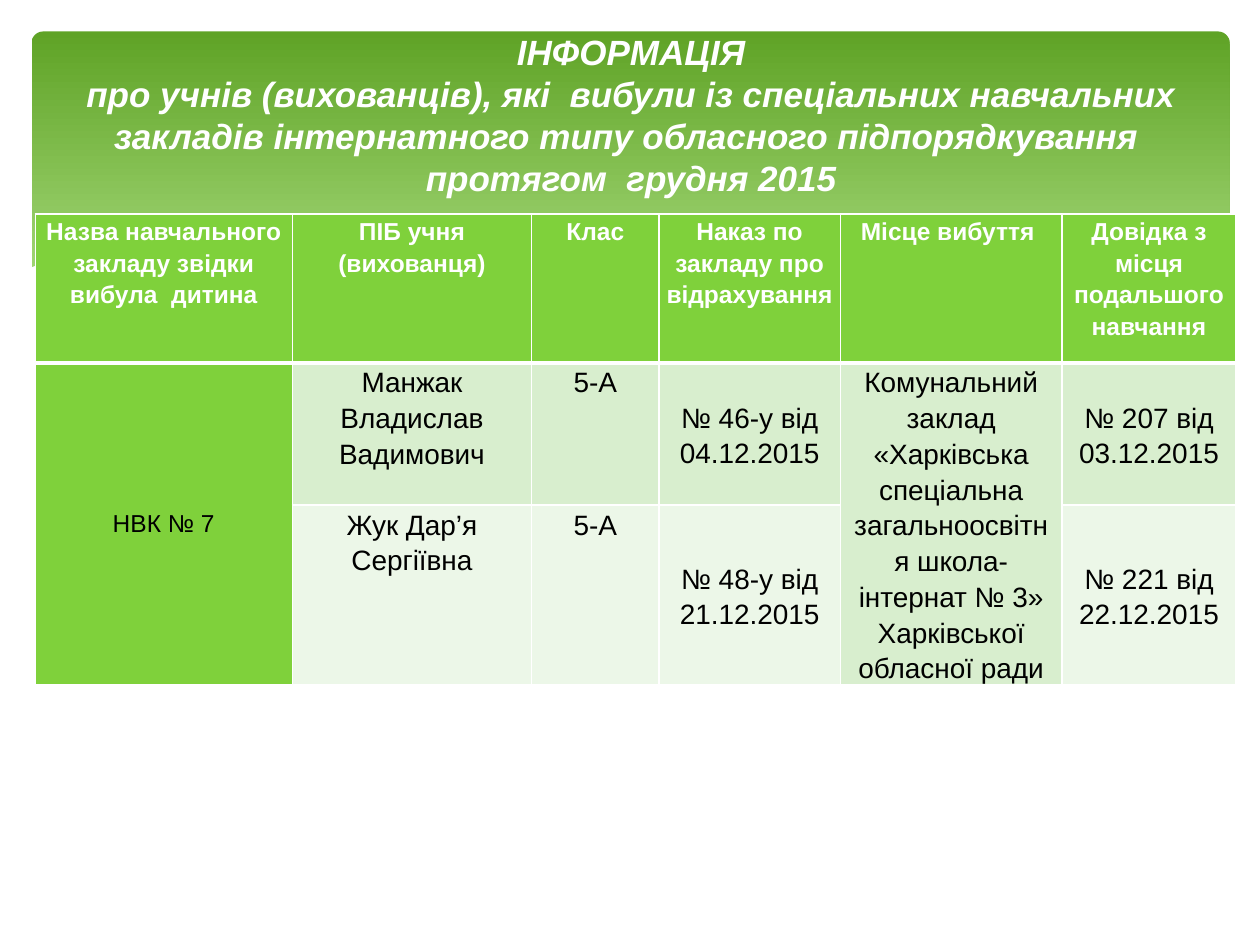
"""Build a one-slide report on pupils who left special boarding schools."""
from lxml import etree
from pptx import Presentation
from pptx.dml.color import RGBColor
from pptx.enum.shapes import MSO_SHAPE
from pptx.enum.text import MSO_ANCHOR, MSO_AUTO_SIZE, PP_ALIGN
from pptx.oxml.ns import qn
from pptx.util import Inches, Pt

ROUNDED = MSO_SHAPE.ROUNDED_RECTANGLE
TOP, MIDDLE = MSO_ANCHOR.TOP, MSO_ANCHOR.MIDDLE
CENTER = PP_ALIGN.CENTER
NO_FIT = MSO_AUTO_SIZE.NONE

FONT = "Arial"
COLORS = {
    "white": "FFFFFF",
    "black": "000000",
    "band_top": "5FA326",
    "band_bottom": "B2E389",
    "header": "7FD13B",
    "row_dark": "D8EECE",
    "row_light": "ECF7E8",
}
TITLE = (
    "ІНФОРМАЦІЯ\v"
    "про учнів (вихованців), які  вибули із спеціальних навчальних "
    "закладів інтернатного типу обласного підпорядкування \v"
    "протягом  грудня 2015"
)
ROWS = [
    ["Назва навчального закладу звідки вибула  дитина", "ПІБ учня (вихованця)",
     "Клас", "Наказ по закладу про відрахування", "Місце вибуття ",
     "Довідка з місця подальшого навчання"],
    ["НВК № 7", "Манжак Владислав Вадимович", "5-А", "№ 46-у від 04.12.2015",
     "Комунальний заклад «Харківська спеціальна загальноосвітня "
     "школа-інтернат № 3» Харківської обласної ради",
     "№ 207 від 03.12.2015"],
    ["", "Жук Дар’я Сергіївна", "5-А", "№ 48-у від 21.12.2015", "",
     "№ 221 від 22.12.2015"],
]
COL_WIDTHS = [2.04, 1.9, 1.01, 1.44, 1.76, 1.38]
ROW_HEIGHTS = [1.18, 1.13, 1.42]
MERGED_COLS = (0, 4)
TOP_COLS = (1, 2)
WAVE = [
    (9.77, 2.46), (9.2, 2.65), (8.5, 2.75), (7.78, 2.76), (6.88, 2.68),
    (5.79, 2.5), (4.47, 2.2), (3.4, 1.97), (2.5, 1.86), (1.77, 1.84),
    (1.06, 1.89), (0.59, 1.99), (0.23, 2.13), (0.23, 3.29), (9.77, 3.29),
]


def rgb(name):
    return RGBColor.from_string(COLORS[name])


def set_font(p, size, color, bold=False, italic=False):
    p.alignment = CENTER
    p.font.name = FONT
    p.font.size = Pt(size)
    p.font.bold = bold
    p.font.italic = italic
    p.font.color.rgb = rgb(color)


def add_band(s):
    sp = s.shapes.add_shape(ROUNDED, Inches(0.25), Inches(0.25), Inches(9.51), Inches(2.7))
    sp.adjustments[0] = 0.034
    sp.shadow.inherit = False
    sp.line.fill.background()
    sp.fill.gradient()
    sp.fill.gradient_angle = 270
    stops = zip(sp.fill.gradient_stops, (0, 0.9), ("band_top", "band_bottom"))
    for stop, position, color in stops:
        stop.position = position
        stop.color.rgb = rgb(color)


def add_wave(s):
    points = [(Inches(x), Inches(y)) for x, y in WAVE]
    builder = s.shapes.build_freeform(*points[0])
    builder.add_line_segments(points[1:], close=True)
    sp = builder.convert_to_shape()
    sp.shadow.inherit = False
    sp.fill.solid()
    sp.fill.fore_color.rgb = rgb("white")
    sp.line.fill.background()


def add_title(s):
    sp = s.shapes.title
    sp.element.getparent().append(sp.element)
    sp.left, sp.top, sp.width, sp.height = map(Inches, (0.51, 0.21, 9, 1.73))
    tf = sp.text_frame
    tf.text = TITLE
    tf.word_wrap = True
    tf.auto_size = NO_FIT
    tf.vertical_anchor = TOP
    tf.margin_top = Inches(0.03)
    set_font(tf.paragraphs[0], 20, "white", bold=True, italic=True)


def set_borders(cell, top, bottom):
    tc_pr = cell._tc.get_or_add_tcPr()
    for side, width in (("L", 1), ("R", 1), ("T", top), ("B", bottom)):
        ln = etree.SubElement(tc_pr, qn(f"a:ln{side}"), w=str(Pt(width)))
        fill = etree.SubElement(ln, qn("a:solidFill"))
        etree.SubElement(fill, qn("a:srgbClr"), val=COLORS["white"])


def format_cell(cell, row, col):
    is_header = row == 0
    is_school = row > 0 and col == 0
    set_borders(cell, 3 if row == 1 else 1, 3 if is_header else 1)
    if is_header or is_school:
        fill = "header"
    elif row == 1 or col in MERGED_COLS:
        fill = "row_dark"
    else:
        fill = "row_light"
    cell.fill.solid()
    cell.fill.fore_color.rgb = rgb(fill)
    side = 0.01 if is_school else 0.06 if is_header else 0.07
    cell.margin_left = cell.margin_right = Inches(side)
    cell.margin_top = cell.margin_bottom = 0
    cell.vertical_anchor = TOP if is_header or col in TOP_COLS else MIDDLE
    p = cell.text_frame.paragraphs[0]
    p.line_spacing = 1.0 if is_school else 1.15
    set_font(p, 14 if is_header or is_school else 16,
             "white" if is_header else "black", bold=is_header)


def add_pupil_table(s):
    frame = s.shapes.add_table(
        len(ROWS), len(COL_WIDTHS), Inches(0.28), Inches(1.7),
        Inches(sum(COL_WIDTHS)), Inches(sum(ROW_HEIGHTS)))
    table = frame.table
    table.first_row = table.horz_banding = False
    for column, width in zip(table.columns, COL_WIDTHS):
        column.width = Inches(width)
    for row, height in zip(table.rows, ROW_HEIGHTS):
        row.height = Inches(height)
    for i, texts in enumerate(ROWS):
        for j, text in enumerate(texts):
            cell = table.cell(i, j)
            cell.text = text
            format_cell(cell, i, j)
    for j in MERGED_COLS:
        table.cell(1, j).merge(table.cell(2, j))


def main():
    prs = Presentation()
    prs.slide_width, prs.slide_height = Inches(10), Inches(7.5)
    s = prs.slides.add_slide(prs.slide_layouts.get_by_name("Title Only"))
    add_band(s)
    add_wave(s)
    add_title(s)
    add_pupil_table(s)
    prs.save("out.pptx")


if __name__ == "__main__":
    main()
